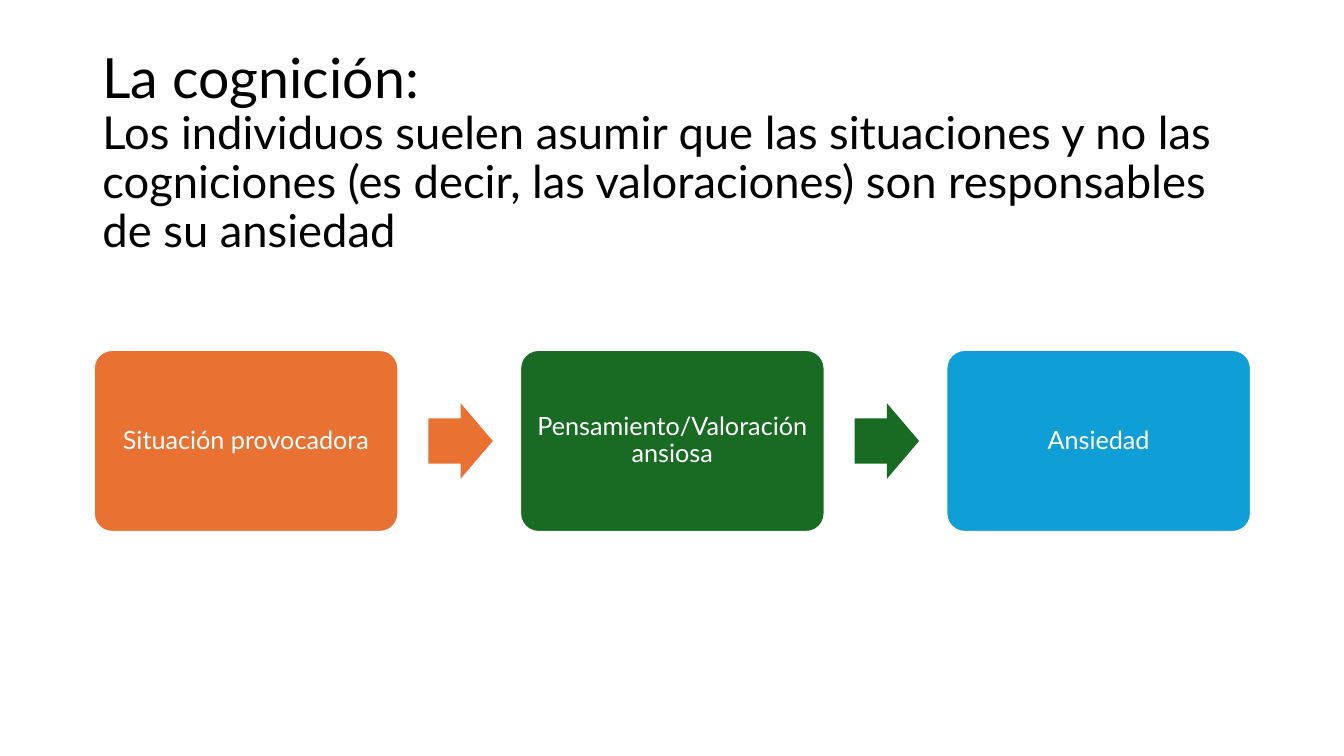
from pptx import Presentation
from pptx.dml.color import RGBColor
from pptx.enum.shapes import MSO_SHAPE as SHAPE
from pptx.enum.text import MSO_ANCHOR as ANCHOR, MSO_AUTO_SIZE as AUTO, PP_ALIGN as ALIGN
from pptx.util import Pt

FONT = "Lato"
HEADING = "La cognición:"
STATEMENT = ("Los individuos suelen asumir que las situaciones y no las cogniciones "
             "(es decir, las valoraciones) son responsables de su ansiedad")
STEPS = [("Situación provocadora", "E97132"),
         ("Pensamiento/Valoración ansiosa", "196B24"),
         ("Ansiedad", "0F9ED5")]


def color(value):
    """Turn a hex string into a colour."""
    return RGBColor.from_string(value)


def style_run(r, size, value):
    """Set the font, size and colour of a run."""
    r.font.name = FONT
    r.font.size = Pt(size)
    r.font.color.rgb = color(value)


def add_title(s, x, y, w, h):
    """Fill the title placeholder with a heading and a smaller statement."""
    sp = s.shapes.title
    sp.left, sp.top, sp.width, sp.height = Pt(x), Pt(y), Pt(w), Pt(h)
    tf = sp.text_frame
    tf.text = f"{HEADING}\v{STATEMENT}"
    tf.auto_size = AUTO.NONE
    tf.word_wrap = True
    tf.vertical_anchor = ANCHOR.TOP
    tf.margin_top = Pt(7.3)
    p = tf.paragraphs[0]
    p.alignment = ALIGN.LEFT
    p.line_spacing = 0.9
    for r, size in zip(p.runs, (39.6, 32.4)):
        style_run(r, size, "000000")


def add_block(s, kind, x, y, w, h, fill, adjustments):
    """Add a flat filled shape without an outline."""
    sp = s.shapes.add_shape(kind, Pt(x), Pt(y), Pt(w), Pt(h))
    sp.shadow.inherit = False
    sp.fill.solid()
    sp.fill.fore_color.rgb = color(fill)
    sp.line.fill.background()
    for i, value in enumerate(adjustments):
        sp.adjustments[i] = value
    return sp


def add_step(s, x, y, w, h, label, fill):
    """Add one rounded step with its centred label."""
    sp = add_block(s, SHAPE.ROUNDED_RECTANGLE, x, y, w, h, fill, [0.1])
    sp.line.color.rgb = color("FFFFFF")
    sp.line.width = Pt(1.5)
    tf = sp.text_frame
    tf.text = label
    tf.word_wrap = True
    tf.vertical_anchor = ANCHOR.MIDDLE
    tf.margin_left = tf.margin_right = tf.margin_top = tf.margin_bottom = Pt(5)
    p = tf.paragraphs[0]
    p.alignment = ALIGN.CENTER
    p.line_spacing = 0.9
    style_run(p.runs[0], 18, "FFFFFF")


def add_process(s, x, y, w, h):
    """Spread the steps over the box and put an arrow in each gap."""
    step_w, arrow_w, arrow_h = 217.5, 46, 54
    pitch = (w - step_w) / (len(STEPS) - 1)
    arrow_dx = step_w + (pitch - step_w - arrow_w) / 2 + 1
    for i, (label, fill) in enumerate(STEPS):
        left = x + i * pitch
        add_step(s, left, y, step_w, h, label, fill)
        if i < len(STEPS) - 1:
            add_block(s, SHAPE.RIGHT_ARROW, left + arrow_dx, y + (h - arrow_h) / 2,
                      arrow_w, arrow_h, fill, [0.6, 0.5])


def main():
    """Build the slide and save it."""
    prs = Presentation()
    prs.slide_width, prs.slide_height = Pt(960), Pt(540)
    s = prs.slides.add_slide(prs.slide_layouts[5])
    add_title(s, 66, 28.8, 828, 205.2)
    add_process(s, 67, 250, 826.5, 130)
    prs.save("out.pptx")


if __name__ == "__main__":
    main()
